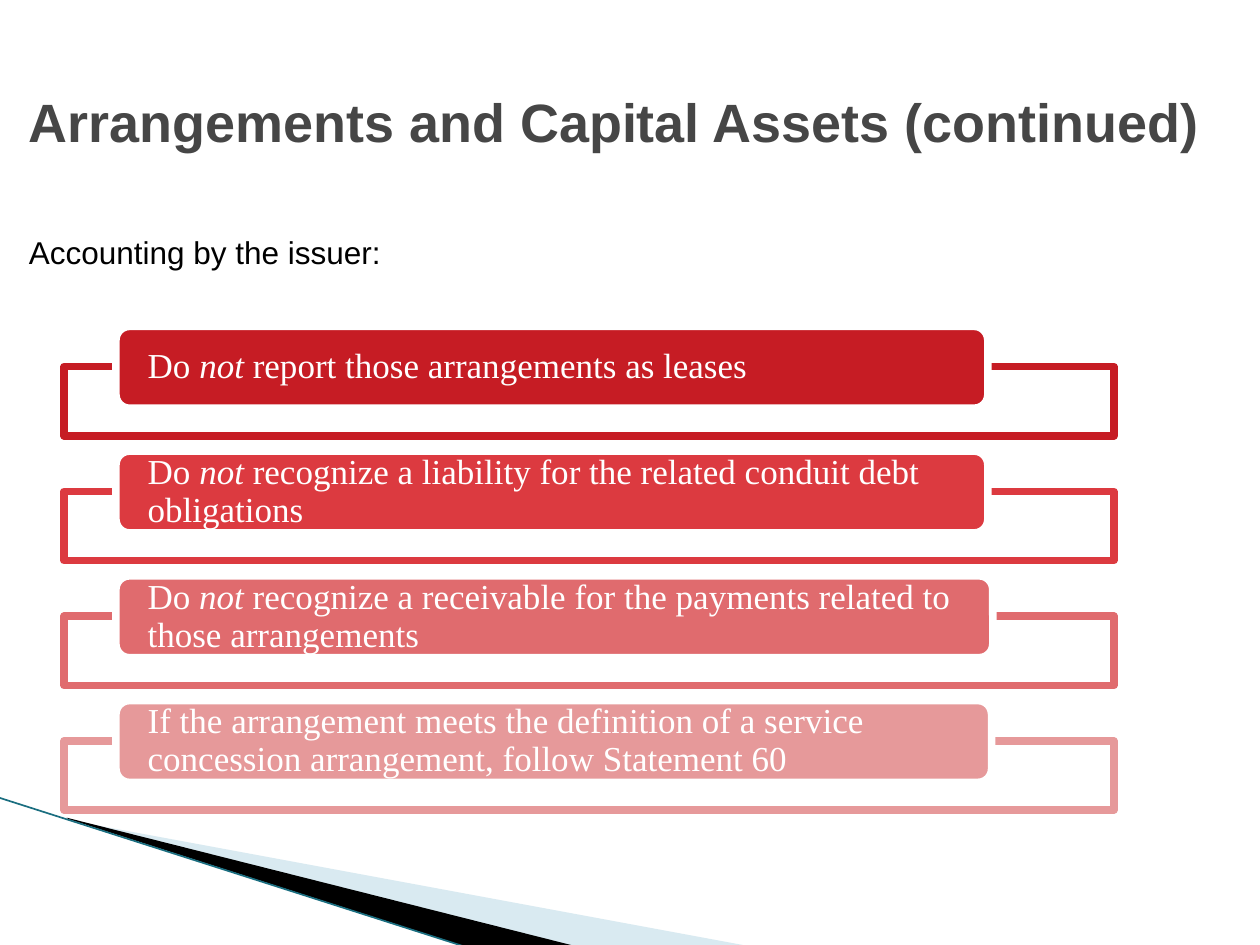
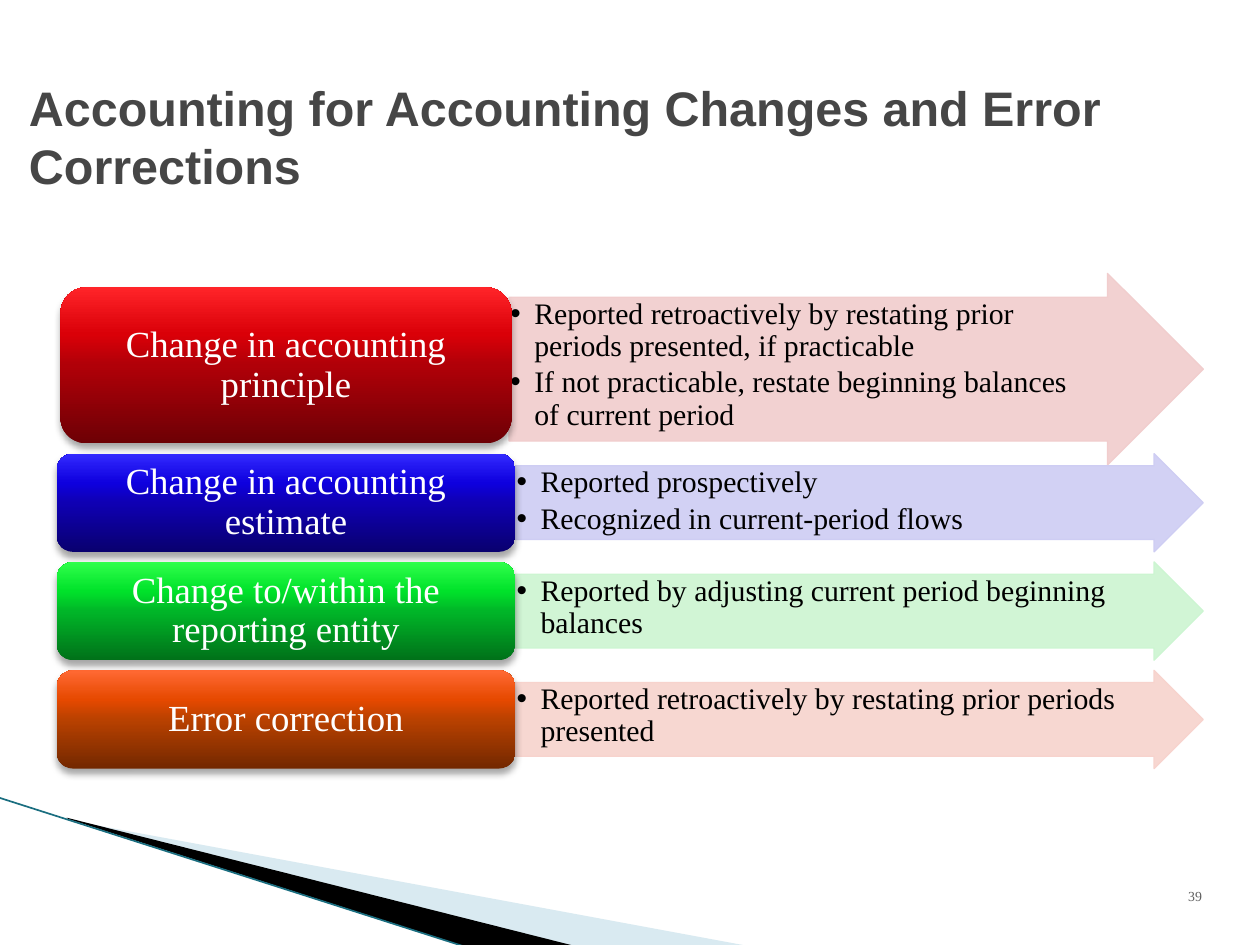
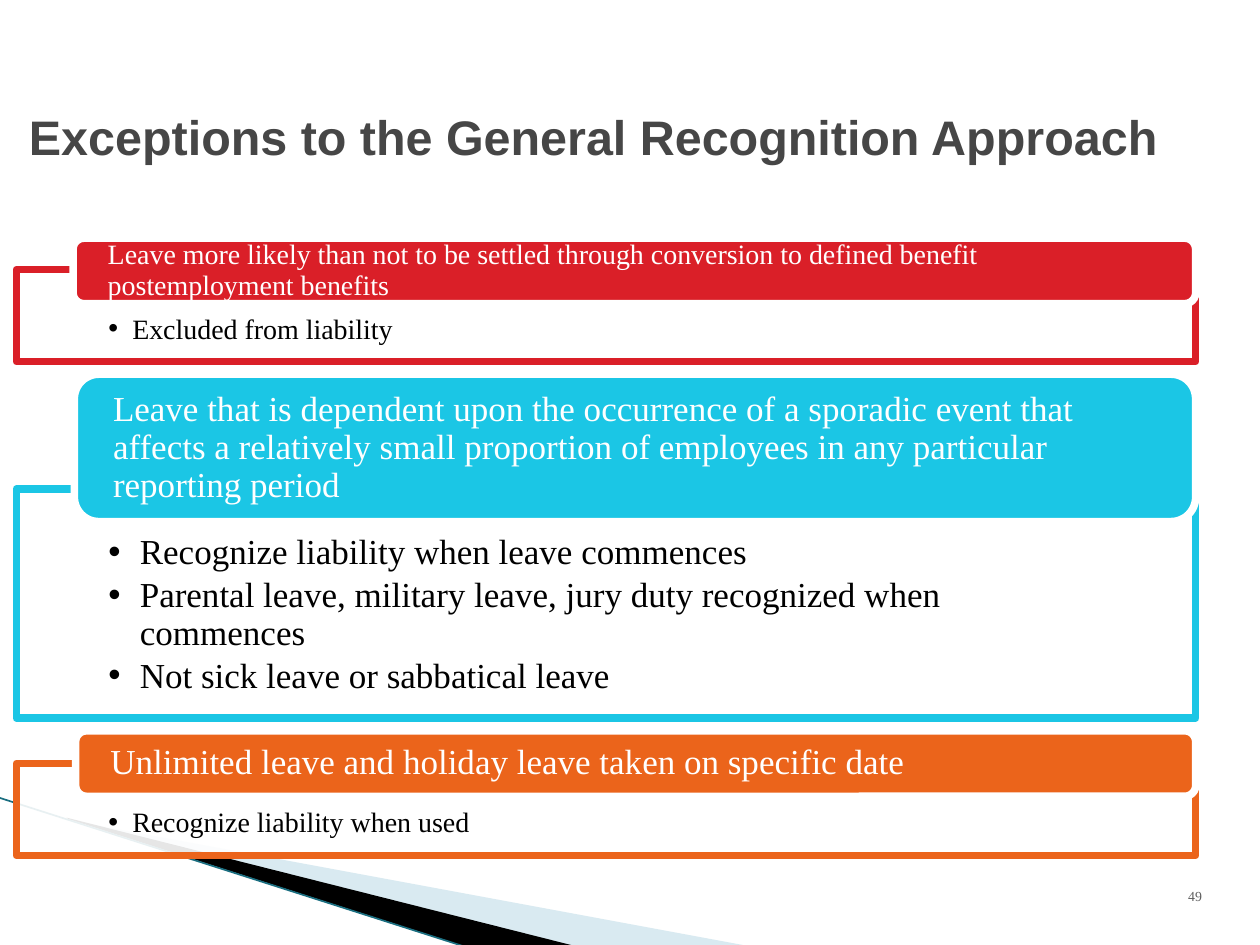
from lxml import etree
from pptx import Presentation
from pptx import util as u
from pptx.dml.color import RGBColor
from pptx.enum import shapes, text
from pptx.oxml.ns import qn

COLORS = {
    "white": "FFFFFF", "black": "000000", "title": "464646", "number": "5F5F5F",
    "pale_band": "A0CBDC", "band_edge": "1A6E80",
    "red": "C61C24", "red2": "DC3A40", "red3": "E06B6E", "red4": "E6999A",
    "crimson": "DA1F28", "cyan": "1BC6E5", "orange": "EB641B",
    "pale_red": "F1CDCD", "pale_blue": "CECDF3",
    "pale_green": "CCF5D1", "pale_orange": "F7D3CD",
}
GRADIENTS = {
    "red": ["6D0005", "B00008", "DA0008", "FF2429"],
    "blue": ["09006F", "0F00B3", "0E00DE", "332AFF"],
    "green": ["007119", "00B628", "00E22A", "2FFF4B"],
    "orange": ["732800", "B94100", "E64900", "FF6933"],
}
STOPS = [0, 50, 70, 100]
SERIF, SANS = "Times New Roman", "Arial"
TITLE_BOX = (0.13, 0.59, 9.49, 0.98)
ALIGN, ANCHOR, PRESET = text.PP_ALIGN, text.MSO_ANCHOR, shapes.MSO_SHAPE


def inches(box):
    return [u.Inches(v) for v in box]


def rgb(name):
    return RGBColor.from_string(COLORS[name])


def sub(parent, tag, **attrs):
    el = etree.SubElement(parent, qn(tag))
    for key, value in attrs.items():
        el.set(key, str(value))
    return el


def set_alpha(color_parent, percent):
    for clr in color_parent.iter(qn("a:srgbClr")):
        sub(clr, "a:alpha", val=percent * 1000)


def write(sp, paragraphs, size, color="black", font=SERIF, bold=False, align=ALIGN.LEFT,
          anchor=ANCHOR.TOP, insets=(0.1, 0.05, 0.1, 0.05), spacing=None, indent=None):
    tf = sp.text_frame
    tf.word_wrap = True
    tf.auto_size = text.MSO_AUTO_SIZE.NONE
    tf.vertical_anchor = anchor
    tf.margin_left, tf.margin_top, tf.margin_right, tf.margin_bottom = inches(insets)
    for i, parts in enumerate(paragraphs):
        p = tf.add_paragraph() if i else tf.paragraphs[0]
        pPr = p._p.get_or_add_pPr()
        if indent:
            pPr.set("marL", str(u.Inches(indent)))
            pPr.set("indent", str(-u.Inches(indent)))
            sub(pPr, "a:buFont", typeface=SANS)
            sub(pPr, "a:buChar", char="•")
            p.space_after = u.Pt(round(size * 0.15, 1))
        else:
            pPr.set("marL", "0")
            pPr.set("indent", "0")
            sub(pPr, "a:buNone")
        p.alignment = align
        p.space_before = u.Pt(0)
        if spacing:
            p.line_spacing = spacing
        for j, part in enumerate([parts] if isinstance(parts, str) else parts):
            r = p.add_run()
            r.text = part
            f = r.font
            f.name, f.size, f.bold, f.italic = font, u.Pt(size), bold, j % 2 == 1
            f.color.rgb = rgb(color)


def add_box(s, preset, box, fill=None, line=None, width=4.33, alpha=100):
    sp = s.shapes.add_shape(preset, *inches(box))
    sp.shadow.inherit = False
    if fill:
        sp.fill.solid()
        sp.fill.fore_color.rgb = rgb(fill)
        if alpha < 100:
            set_alpha(sp._element.spPr, alpha)
    if line:
        sp.line.color.rgb = rgb(line)
        sp.line.width = u.Pt(width)
    else:
        sp.line.fill.background()
    return sp


def add_wedge(s, points, color, alpha=100):
    pts = [tuple(inches(pt)) for pt in points]
    builder = s.shapes.build_freeform(*pts[0])
    builder.add_line_segments(pts[1:], close=True)
    sp = builder.convert_to_shape()
    sp.shadow.inherit = False
    sp.fill.solid()
    sp.fill.fore_color.rgb = rgb(color)
    if alpha < 100:
        set_alpha(sp._element.spPr, alpha)
    sp.line.fill.background()
    return sp


def move_band_to_master(prs, s):
    pale = add_wedge(s, [(0.55, 6.51), (5.95, 7.51), (4.56, 7.51), (0.55, 6.5)],
                     "pale_band", alpha=40)
    dark = add_wedge(s, [(0.53, 6.49), (4.57, 7.51), (3.72, 7.52), (0.54, 6.5)], "black")
    edge = s.shapes.add_connector(shapes.MSO_CONNECTOR.STRAIGHT,
                                  *inches((-0.01, 6.33, 3.71, 7.52)))
    edge.line.color.rgb = rgb("band_edge")
    edge.line.width = u.Pt(0.95)
    sub(edge._element.spPr, "a:effectLst")
    tree = prs.slide_master.shapes.element
    for i, sp in enumerate((pale, dark, edge)):
        tree.insert(2 + i, sp._element)


def add_slide(prs, layout, title, size, box=TITLE_BOX, number=None):
    s = prs.slides.add_slide(prs.slide_layouts[layout])
    sp = s.shapes.title
    sp.left, sp.top, sp.width, sp.height = inches(box)
    write(sp, [title], size, "title", SANS, bold=True, anchor=ANCHOR.MIDDLE,
          insets=(0.1, 0, 0, 0))
    if number:
        sp = s.shapes.add_textbox(*inches((8.97, 6.95, 1.03, 0.33)))
        write(sp, [number], 7.9, "number", align=ALIGN.CENTER, anchor=ANCHOR.MIDDLE)
    return s


def framed_tab(s, frame, tab, color, heading, size, inset, bullets=(), bullet_size=16):
    sp = add_box(s, PRESET.RECTANGLE, frame, "white", color, alpha=90)
    if bullets:
        write(sp, bullets, bullet_size, insets=(0.73, 0.36, 0.73, 0.12), spacing=0.9,
              indent=0.25 if bullet_size > 16 else 0.19)
    sp = add_box(s, PRESET.ROUNDED_RECTANGLE, tab, color, "white")
    write(sp, [heading], size, "white", anchor=ANCHOR.MIDDLE,
          insets=(inset, 0, inset, 0), spacing=0.9)


def gradient_label(s, box, gradient, label):
    sp = add_box(s, PRESET.ROUNDED_RECTANGLE, box)
    sp.fill.gradient()
    sp.fill.gradient_angle = 90
    spPr = sp._element.spPr
    stops = spPr.find(".//" + qn("a:gsLst"))
    stops.clear()
    for pos, color in zip(STOPS, GRADIENTS[gradient]):
        sub(sub(stops, "a:gs", pos=pos * 1000), "a:srgbClr", val=color)
    shadow = sub(spPr.find(qn("a:effectLst")), "a:outerShdw", blurRad=u.Pt(4),
                 dist=u.Pt(3), dir=90 * 60000, rotWithShape=0)
    sub(shadow, "a:srgbClr", val=COLORS["black"])
    set_alpha(shadow, 35)
    write(sp, [label], 21, "white", align=ALIGN.CENTER, anchor=ANCHOR.MIDDLE,
          insets=(0.09, 0.04, 0.09, 0.04), spacing=0.9)


def bullet_arrow(s, box, color, bullets):
    sp = add_box(s, PRESET.RIGHT_ARROW, box, color, color, width=0.75, alpha=90)
    sp.adjustments[0], sp.adjustments[1] = 0.75, 0.5
    write(sp, bullets, 17, insets=(0.01, 0.01, box[3] / 4 + 0.01, 0.01),
          spacing=0.9, indent=0.19)


def arrangements_slide(prs):
    s = add_slide(prs, 1, "Arrangements and Capital Assets (continued)", 30.8,
                  box=(0.13, 0.35, 9.49, 1.22))
    body = s.placeholders[1]
    body.left, body.top, body.width, body.height = inches((0.13, 1.76, 9.36, 0.6))
    write(body, ["Accounting by the issuer:"], 18, font=SANS, spacing=1.12)
    rows = [
        ("red", 6.92, ("Do ", "not", " report those arrangements as leases")),
        ("red2", 6.92, ("Do ", "not", " recognize a liability for the related conduit debt "
                        "obligations")),
        ("red3", 6.96, ("Do ", "not", " recognize a receivable for the payments related to "
                        "those arrangements")),
        ("red4", 6.95, "If the arrangement meets the definition of a service concession "
                       "arrangement, follow Statement 60"),
    ]
    for i, (color, width, heading) in enumerate(rows):
        top = 2.59 + i * 0.99
        framed_tab(s, (0.51, top + 0.32, 8.33, 0.55), (0.92, top, width, 0.65),
                   color, heading, 20, 0.22)
    return s


def changes_slide(prs):
    s = add_slide(prs, 5, "Accounting for Accounting Changes and Error Corrections", 27.7,
                  number="39")
    bullet_arrow(s, (4.04, 2.17, 5.51, 1.52), "pale_red",
                 ["Reported retroactively by restating prior periods presented, if practicable",
                  "If not practicable, restate beginning balances of current period"])
    gradient_label(s, (0.48, 2.28, 3.58, 1.24), "red", "Change in accounting principle")
    rows = [
        ("blue", "Change in accounting estimate",
         ["Reported prospectively", "Recognized in current-period flows"]),
        ("green", "Change to/within the reporting entity",
         ["Reported by adjusting current period beginning balances"]),
        ("orange", "Error correction",
         ["Reported retroactively by restating prior periods presented"]),
    ]
    for i, (hue, label, bullets) in enumerate(rows):
        top = 3.6 + i * 0.86
        bullet_arrow(s, (4.09, top, 5.46, 0.78), "pale_" + hue, bullets)
        gradient_label(s, (0.45, top, 3.64, 0.78), hue, label)


def exceptions_slide(prs):
    s = add_slide(prs, 5, "Exceptions to the General Recognition Approach", 27.7, number="49")
    left, right = 0.13, 9.49
    rows = [
        ("crimson", 2.14, 0.73, 0.58, 1.89, 0.52, 16, 16,
         "Leave more likely than not to be settled through conversion to defined benefit "
         "postemployment benefits", ["Excluded from liability"]),
        ("cyan", 3.88, 1.82, 0.59, 2.97, 1.17, 20, 20,
         "Leave that is dependent upon the occurrence of a sporadic event that affects a "
         "relatively small proportion of employees in any particular reporting period",
         ["Recognize liability when leave commences",
          "Parental leave, military leave, jury duty recognized when commences",
          "Not sick leave or sabbatical leave"]),
        ("orange", 6.06, 0.73, 0.6, 5.8, 0.52, 20, 16,
         "Unlimited leave and holiday leave taken on specific date",
         ["Recognize liability when used"]),
    ]
    for color, top, height, tab_x, tab_y, tab_h, size, bullet_size, heading, bullets in rows:
        framed_tab(s, (left, top, right - left, height), (tab_x, tab_y, right - tab_x, tab_h),
                   color, heading, size, 0.25, bullets, bullet_size)


def main():
    prs = Presentation()
    prs.slide_width, prs.slide_height = u.Inches(10), u.Inches(7.5)
    first = arrangements_slide(prs)
    move_band_to_master(prs, first)
    changes_slide(prs)
    exceptions_slide(prs)
    prs.save("out.pptx")


if __name__ == "__main__":
    main()
